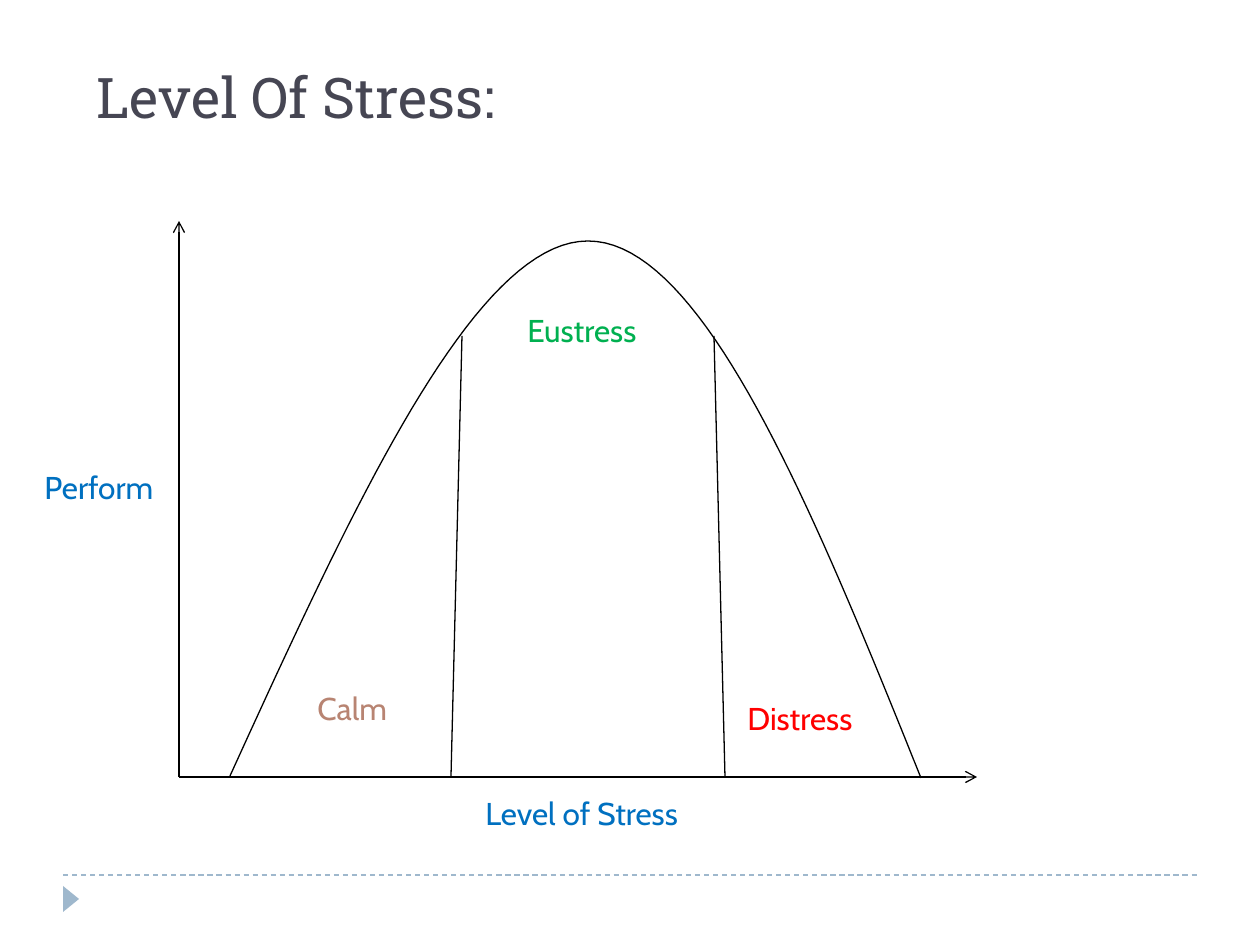
from lxml.etree import SubElement
from pptx import Presentation
from pptx.dml.color import RGBColor
from pptx.enum.dml import MSO_LINE
from pptx.enum.shapes import MSO_CONNECTOR, MSO_SHAPE
from pptx.enum.text import MSO_ANCHOR
from pptx.oxml.ns import qn
from pptx.util import Emu, Pt

PX_PER_INCH = 126
COLORS = {
    "title": "464653",
    "accent": "9FB8CD",
    "curve": "000000",
    "axis": "0070C0",
    "calm": "B88472",
    "eustress": "00B050",
    "distress": "FF0000",
}


def px(length):
    """Turn px into EMU."""
    return Emu(round(length * 914400 / PX_PER_INCH))


def rgb(role):
    """Return the colour of a role."""
    return RGBColor.from_string(COLORS[role])


def apply_format(target, values):
    """Set each attribute of target from a dict of values."""
    for attribute, value in values.items():
        setattr(target, attribute, value)


def add_line(slide, start, end, role="curve", dash=None, arrow=False):
    """Draw a thin straight line, with an arrowhead at its end on request."""
    segment = slide.shapes.add_connector(
        MSO_CONNECTOR.STRAIGHT, *map(px, (*start, *end))
    )
    segment.line.color.rgb = rgb(role)
    apply_format(segment.line, {"width": Pt(0.75), "dash_style": dash})
    if arrow:
        SubElement(segment.line._get_or_add_ln(), qn("a:tailEnd"), type="arrow")
    SubElement(segment._element.spPr, qn("a:effectLst"))


def add_label(slide, box, wording, role, font="Cabin", size=18,
              wrap=False, anchor=MSO_ANCHOR.TOP):
    """Write one line of text in a box."""
    frame = slide.shapes.add_textbox(*map(px, box)).text_frame
    apply_format(frame, {"word_wrap": wrap, "vertical_anchor": anchor})
    run = frame.paragraphs[0].add_run()
    run.text = wording
    apply_format(run.font, {"name": font, "size": Pt(size)})
    run.font.color.rgb = rgb(role)


def bezier_points(start, control_1, control_2, end, steps=40):
    """Return points along a cubic curve, without its start."""
    points = []
    for step in range(1, steps + 1):
        t = step / steps
        weights = ((1 - t) ** 3, 3 * t * (1 - t) ** 2, 3 * t**2 * (1 - t), t**3)
        points.append(tuple(
            px(sum(weight * value for weight, value in zip(weights, values)))
            for values in zip(start, control_1, control_2, end)
        ))
    return points


def add_title(slide, box):
    """Place the slide title at the bottom of its box."""
    add_label(slide, box, "Level Of Stress:", "title", "Roboto Slab", 32,
              True, MSO_ANCHOR.BOTTOM)


def add_footer(slide, box):
    """Place the dashed rule and the marker below it."""
    left, top, width, _ = box
    add_line(slide, (left, top), (left + width, top), "accent", MSO_LINE.DASH)
    marker = slide.shapes.add_shape(
        MSO_SHAPE.ISOSCELES_TRIANGLE, *map(px, (left - 5, top + 16, 26, 16))
    )
    apply_format(marker, {"rotation": 90})
    marker.shadow.inherit = False
    marker.fill.solid()
    marker.fill.fore_color.rgb = rgb("accent")
    marker.line.fill.background()


def add_stress_curve(slide, box):
    """Place the axes, the performance curve, its zones and their labels."""
    left, top, width, height = box

    def at(x, y):
        return left + x, top + y

    origin = at(0, height)
    for axis_end in (at(0, 0), at(width, height)):
        add_line(slide, origin, axis_end, arrow=True)

    start, peak, end = at(51, 555), at(409, 20), at(742, 557)
    rise = bezier_points(start, at(173, 288), at(295, 20), peak)
    fall = bezier_points(peak, at(524, 20), at(634, 288), end)
    builder = slide.shapes.build_freeform(*map(px, start), scale=1.0)
    builder.add_line_segments(rise + fall, close=False)
    curve = builder.convert_to_shape()
    curve.shadow.inherit = False
    curve.fill.background()
    curve.line.color.rgb = rgb("curve")
    apply_format(curve.line, {"width": Pt(0.75)})

    for zone_top, zone_foot in ((283, 272), (535, 546)):
        add_line(slide, at(zone_top, 115), at(zone_foot, height))

    for wording, role, x, y, label_width in (
        ("Level of Stress", "axis", 294, 567, 236),
        ("Perform", "axis", -147, 241, 139),
        ("Calm", "calm", 126, 462, 100),
        ("Eustress", "eustress", 336, 84, 149),
        ("Distress", "distress", 556, 472, 140),
    ):
        add_label(slide, (*at(x, y), label_width, 50), wording, role)


def main():
    """Build the slide and save it."""
    deck = Presentation()
    apply_format(deck, {"slide_width": px(1260), "slide_height": px(945)})
    slide = deck.slides.add_slide(deck.slide_layouts[6])
    add_footer(slide, (63, 875, 1134, 40))
    add_title(slide, (84, 0, 1134, 136))
    add_stress_curve(slide, (179, 221, 798, 556))
    deck.save("out.pptx")


if __name__ == "__main__":
    main()
